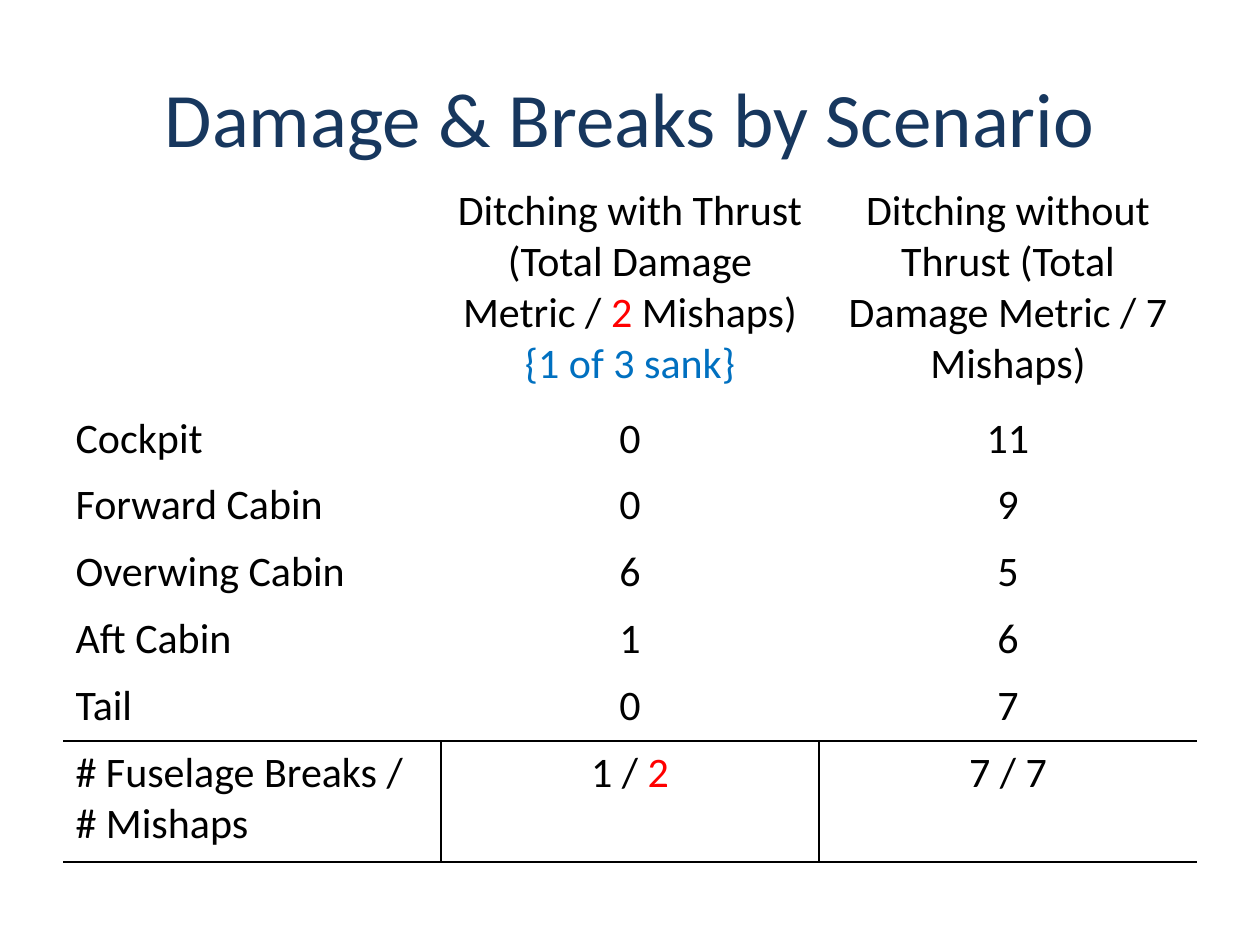
from lxml.etree import SubElement
from pptx import Presentation
from pptx.dml.color import RGBColor
from pptx.enum.text import MSO_ANCHOR as Anchor, PP_ALIGN as Align
from pptx.oxml.ns import qn
from pptx.util import Inches, Pt

FONT = "Calibri"
NAVY, BLACK, RED, BLUE = "17375E", "000000", "FF0000", "0070C0"
NO_STYLE_NO_GRID = "{2D5ABB26-0587-4C30-8999-92F81FD0307C}"
ROW_HEIGHTS = [1.81] + [0.53] * 5 + [0.96]

# A cell is a list of paragraphs; a paragraph is a list of (text, colour) spans.
HEADER = [
    [],
    [[("Ditching with Thrust (Total Damage Metric / ", BLACK), ("2", RED), (" Mishaps)", BLACK)],
     [("{1 of 3 sank}", BLUE)]],
    [[("Ditching without Thrust (Total Damage Metric / 7 Mishaps)", BLACK)]],
]
DAMAGE = [
    ("Cockpit", 0, 11),
    ("Forward Cabin", 0, 9),
    ("Overwing Cabin", 6, 5),
    ("Aft Cabin", 1, 6),
    ("Tail", 0, 7),
]
BREAKS = [
    [[("# Fuselage Breaks / # Mishaps", BLACK)]],
    [[("1 / ", BLACK), ("2", RED)]],
    [[("7 / 7", BLACK)]],
]


def colour(value):
    return RGBColor.from_string(value)


def write_paragraphs(frame, paragraphs, size, align):
    for index, spans in enumerate(paragraphs):
        para = frame.add_paragraph() if index else frame.paragraphs[0]
        para.alignment = align
        for text, shade in spans:
            span = para.add_run()
            span.text = text
            span.font.name = FONT
            span.font.size = Pt(size)
            span.font.color.rgb = colour(shade)


def set_borders(cell, sides):
    """Draw 1 pt lines on the given sides and hide the others."""
    properties = cell._tc.get_or_add_tcPr()
    for side in "LRTB":
        line = SubElement(properties, qn(f"a:ln{side}"), w=str(Pt(1)))
        if side in sides:
            fill = SubElement(line, qn("a:solidFill"))
            SubElement(fill, qn("a:srgbClr"), val=BLACK)
        else:
            SubElement(line, qn("a:noFill"))


def add_title(page, left, top, width, height):
    box = page.shapes.add_textbox(left, top, width, height)
    frame = box.text_frame
    frame.word_wrap = True
    frame.vertical_anchor = Anchor.MIDDLE
    write_paragraphs(frame, [[("Damage & Breaks by Scenario", NAVY)]], 44, Align.CENTER)


def add_damage_table(page, left, top, width, height):
    body = [[[[(str(value), BLACK)]] for value in row] for row in DAMAGE]
    rows = [HEADER, *body, BREAKS]
    table = page.shapes.add_table(len(rows), len(HEADER), left, top, width, height).table
    table.first_row = table.horz_banding = False
    table._tbl.tblPr.find(qn("a:tableStyleId")).text = NO_STYLE_NO_GRID

    last_row, last_column = len(rows) - 1, len(HEADER) - 1
    for r, row in enumerate(rows):
        table.rows[r].height = Inches(ROW_HEIGHTS[r])
        for c, paragraphs in enumerate(row):
            cell = table.cell(r, c)
            align = Align.CENTER if c else Align.LEFT
            write_paragraphs(cell.text_frame, paragraphs, 24, align)
            sides = ""
            if r == last_row - 1:
                sides = "B"
            elif r == last_row:
                sides = "TB" + ("L" if c else "") + ("R" if c < last_column else "")
            set_borders(cell, sides)
            cell.fill.background()


def main():
    deck = Presentation()
    deck.slide_width, deck.slide_height = Inches(10), Inches(7.5)
    page = deck.slides.add_slide(deck.slide_layouts[6])
    add_title(page, Inches(0.5), Inches(0.3), Inches(9), Inches(1.25))
    add_damage_table(page, Inches(0.5), Inches(1.42), Inches(9), Inches(5.43))
    deck.save("out.pptx")


if __name__ == "__main__":
    main()
